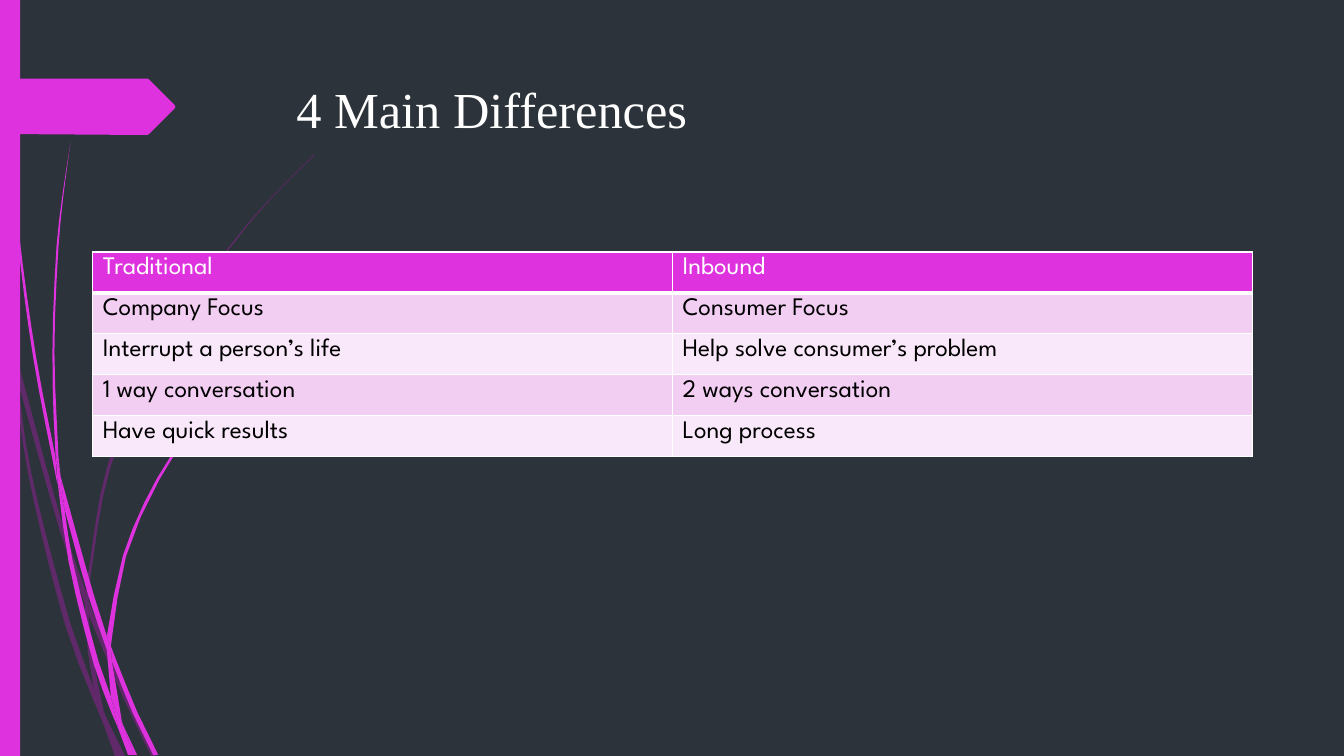
from dataclasses import dataclass
from math import dist

from lxml import etree
from pptx import Presentation
from pptx import util as u
from pptx.dml.color import RGBColor
from pptx.enum import shapes, text
from pptx.oxml.ns import qn

Point = tuple[float, float]

DARK = RGBColor(0x2C, 0x33, 0x3A)
MAGENTA = RGBColor(0xDE, 0x32, 0xDE)
PURPLE = RGBColor(0xB0, 0x1C, 0xB0)
PINK = RGBColor(0xF2, 0xCE, 0xF2)
PALE = RGBColor(0xF9, 0xE8, 0xF9)
WHITE = RGBColor(0xFF, 0xFF, 0xFF)
BLACK = RGBColor(0x00, 0x00, 0x00)
STEPS_PER_INCH = 3


@dataclass
class Wisp:
    down: list[Point]
    up: list[Point]


@dataclass
class Strands:
    color: RGBColor
    opacity: int
    wisps: list[Wisp]


FAINT = Strands(PURPLE, 40, [
    Wisp([(0, 2.82), (0, 2.99), (.1, 3.44)], [(.11, 3.5), (.09, 3.22), (0, 2.82)]),
    Wisp([(.17, 3.76), (.58, 5.22), (.84, 5.99)], [(.85, 5.86), (.62, 5.2), (.14, 3.45)]),
    Wisp([(.88, 6.1), (1.23, 6.94), (1.5, 7.5)],
         [(1.55, 7.5), (1.27, 6.92), (.92, 6.07), (.88, 5.96)]),
    Wisp([(1.05, 7.11), (1.19, 7.5)], [(1.24, 7.5), (1.05, 7.11)]),
    Wisp([(.11, 3.5), (.28, 4.7), (.65, 6.21), (.92, 6.93), (1.01, 7.14)],
         [(.99, 7.07), (.93, 6.83), (.7, 6.19), (.31, 4.69), (.17, 3.76)]),
    Wisp([(.84, 5.99), (.87, 6.46), (.93, 6.83), (.96, 6.92), (1.05, 7.11)],
         [(1.03, 7.06), (.91, 6.46), (.88, 6.1), (.88, 6.08)]),
    Wisp([(3.12, 1.53), (2.68, 1.97), (2.28, 2.44), (1.58, 3.48), (1.07, 4.61), (.85, 5.86)],
         [(.88, 5.96), (.88, 5.84), (1.1, 4.62), (1.6, 3.49), (2.29, 2.45),
          (2.68, 1.98), (3.12, 1.54)]),
    Wisp([(1.01, 7.14), (1.14, 7.5)], [(1.19, 7.5), (1.01, 7.14)]),
    Wisp([(.85, 5.86), (.84, 5.99)], [(.88, 6.1), (.88, 5.96)]),
    Wisp([(.93, 6.83), (.99, 7.07), (1.01, 7.14), (1.19, 7.5)],
         [(1.05, 7.11), (.96, 6.92), (.93, 6.83)]),
])
BRIGHT = Strands(MAGENTA, 100, [
    Wisp([(.03, 0), (.07, 1.1), (.17, 2.33), (.33, 3.55), (.57, 4.81)],
         [(.55, 4.53), (.36, 3.55), (.19, 2.32), (.08, 1.09), (.04, 0)]),
    Wisp([(.64, 5.05), (.88, 5.92), (1.06, 6.45)], [(1.06, 6.31), (.93, 5.9), (.6, 4.72)]),
    Wisp([(1.11, 6.56), (1.32, 7.08), (1.52, 7.49)],
         [(1.57, 7.49), (1.36, 7.06), (1.13, 6.49), (1.1, 6.41)]),
    Wisp([(.57, 4.77), (.68, 5.57), (.93, 6.59), (1.11, 7.08), (1.17, 7.22)],
         [(1.16, 7.17), (1.1, 6.91), (.98, 6.57), (.72, 5.56), (.64, 5.05)]),
    Wisp([(.7, 1.41), (.62, 1.93), (.56, 2.45), (.52, 3.49), (.55, 4.49), (.6, 4.72)],
         [(.58, 4.53), (.54, 3.49), (.58, 2.45), (.63, 1.93), (.7, 1.41)]),
    Wisp([(1.22, 7.19), (1.33, 7.49)], [(1.36, 7.49), (1.22, 7.19)]),
    Wisp([(.55, 4.49), (.57, 4.77), (.64, 5.05)], [(.6, 4.72), (.55, 4.49)]),
    Wisp([(2.6, 3.44), (2.31, 3.73), (2.04, 4.05), (1.56, 4.74), (1.22, 5.51), (1.06, 6.31)],
         [(1.1, 6.41), (1.11, 6.33), (1.25, 5.52), (1.58, 4.76), (2.05, 4.06),
          (2.31, 3.74), (2.61, 3.44)]),
    Wisp([(1.17, 7.22), (1.27, 7.49)], [(1.31, 7.49), (1.17, 7.22)]),
    Wisp([(1.06, 6.45), (1.1, 6.91), (1.16, 7.06), (1.22, 7.19)],
         [(1.21, 7.16), (1.11, 6.56), (1.09, 6.51), (1.06, 6.45)]),
    Wisp([(1.06, 6.31), (1.06, 6.45)], [(1.11, 6.56), (1.1, 6.41)]),
    Wisp([(1.1, 6.91), (1.16, 7.17), (1.17, 7.22), (1.3, 7.49)],
         [(1.33, 7.49), (1.22, 7.19), (1.16, 7.06), (1.1, 6.91)]),
])
TAG = [(0, .78), (1.46, .78), (1.48, .79), (1.73, 1.04), (1.74, 1.06),
       (1.73, 1.08), (1.48, 1.33), (1.46, 1.34), (0, 1.33)]
ROWS = [
    ("Traditional", "Inbound"),
    ("Company Focus", "Consumer Focus"),
    ("Interrupt a person’s life", "Help solve consumer’s problem"),
    ("1 way conversation", "2 ways conversation"),
    ("Have quick results", "Long process"),
]


def smooth(points: list[Point]) -> list[Point]:
    last = len(points) - 1
    slopes = []
    for i in range(last + 1):
        a, b, c = points[max(i - 1, 0)], points[i], points[min(i + 1, last)]
        span = dist(a, b) + dist(b, c)
        slopes.append(((c[0] - a[0]) / span, (c[1] - a[1]) / span))
    curve = [points[0]]
    for i in range(last):
        a, b = points[i], points[i + 1]
        length = dist(a, b)
        steps = max(1, round(length * STEPS_PER_INCH))
        for step in range(1, steps + 1):
            t = step / steps
            blend = t * t * (3 - 2 * t)
            leave, arrive = t * (1 - t) ** 2 * length, t * t * (t - 1) * length
            curve.append(tuple(
                a[k] + (b[k] - a[k]) * blend + slopes[i][k] * leave + slopes[i + 1][k] * arrive
                for k in (0, 1)))
    return curve


def paint(sp, color: RGBColor, opacity: int = 100) -> None:
    sp.shadow.inherit = False
    sp.fill.solid()
    sp.fill.fore_color.rgb = color
    sp.line.fill.background()
    if opacity < 100:
        clr = sp._element.spPr.find(qn("a:solidFill"))[0]
        etree.SubElement(clr, qn("a:alpha"), val=str(opacity * 1000))


def add_outline(s, points: list[Point], color: RGBColor, opacity: int = 100) -> None:
    corners = [(u.Inches(x), u.Inches(y)) for x, y in points]
    builder = s.shapes.build_freeform(*corners[0])
    builder.add_line_segments(corners[1:], close=True)
    paint(builder.convert_to_shape(), color, opacity)


def add_strands(s, strands: Strands) -> None:
    for wisp in strands.wisps:
        add_outline(s, smooth(wisp.down) + smooth(wisp.up), strands.color, strands.opacity)


def write(tf, words: str, *, font: str, size: int, color: RGBColor) -> None:
    r = tf.paragraphs[0].add_run()
    r.text = words
    r.font.name = font
    r.font.size = u.Pt(size)
    r.font.bold = False
    r.font.color.rgb = color


def add_borders(cell, bottom: int) -> None:
    tcPr = cell._tc.get_or_add_tcPr()
    for side, width in {"L": 1, "R": 1, "T": 1, "B": bottom}.items():
        ln = etree.SubElement(tcPr, qn(f"a:ln{side}"), w=str(int(u.Pt(width))))
        fill = etree.SubElement(ln, qn("a:solidFill"))
        etree.SubElement(fill, qn("a:srgbClr"), val=str(WHITE))


def add_comparison(s) -> None:
    table = s.shapes.add_table(len(ROWS), len(ROWS[0]), u.Inches(0.92), u.Inches(2.5),
                               u.Inches(11.5), u.Inches(2.03)).table
    for i, row in enumerate(ROWS):
        header = i == 0
        for j, words in enumerate(row):
            cell = table.cell(i, j)
            add_borders(cell, bottom=3 if header else 1)
            cell.fill.solid()
            cell.fill.fore_color.rgb = MAGENTA if header else PINK if i % 2 else PALE
            write(cell.text_frame, words, font="League Spartan", size=18,
                  color=WHITE if header else BLACK)


def add_title(s) -> None:
    tf = s.shapes.add_textbox(u.Inches(2.84), u.Inches(0.68),
                              u.Inches(9.75), u.Inches(1.4)).text_frame
    tf.word_wrap = True
    tf.vertical_anchor = text.MSO_ANCHOR.TOP
    tf.margin_top = u.Inches(0.1)
    write(tf, "4 Main Differences", font="Times New Roman", size=36, color=WHITE)


def main() -> None:
    prs = Presentation()
    prs.slide_width, prs.slide_height = u.Inches(13.33), u.Inches(7.5)
    s = prs.slides.add_slide(prs.slide_layouts[6])
    s.background.fill.solid()
    s.background.fill.fore_color.rgb = DARK
    add_strands(s, FAINT)
    add_strands(s, BRIGHT)
    bar = s.shapes.add_shape(shapes.MSO_SHAPE.RECTANGLE, 0, 0, u.Inches(0.2), prs.slide_height)
    paint(bar, MAGENTA)
    add_outline(s, TAG, MAGENTA)
    add_title(s)
    add_comparison(s)
    prs.save("out.pptx")


if __name__ == "__main__":
    main()
